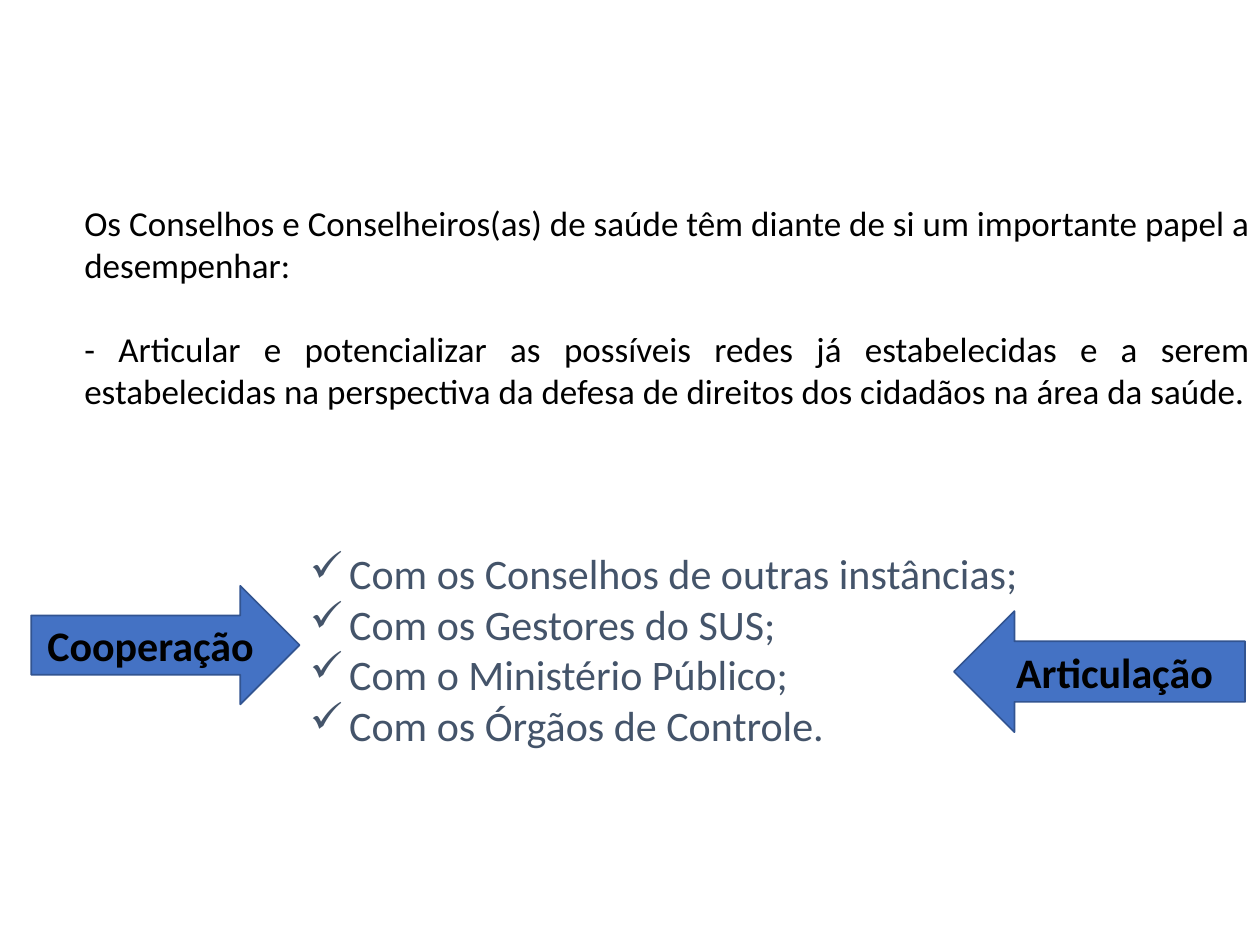
import pptx
import pptx.util
import pptx.dml.color
import pptx.enum.shapes
import pptx.enum.text
import lxml.etree
import pptx.oxml.ns

Cm = pptx.util.Cm
Pt = pptx.util.Pt
RGB = pptx.dml.color.RGBColor
Kind = pptx.enum.shapes.MSO_SHAPE
Align = pptx.enum.text.PP_ALIGN
Anchor = pptx.enum.text.MSO_ANCHOR

BLACK = RGB(0x00, 0x00, 0x00)
SLATE = RGB(0x44, 0x54, 0x6A)
BLUE = RGB(0x44, 0x72, 0xC4)
NAVY = RGB(0x32, 0x54, 0x91)


def write(par, text, size, color, bold=False):
    run = par.add_run()
    run.text = text
    run.font.name = "Calibri"
    run.font.size = Pt(size)
    run.font.color.rgb = color
    run.font.bold = bold


def add_box(left, top, width, height):
    frame = slide.shapes.add_textbox(Cm(left), Cm(top), Cm(width), Cm(height)).text_frame
    frame.word_wrap = True
    return frame


deck = pptx.Presentation()
deck.slide_width = Cm(25.4)
deck.slide_height = Cm(19.05)
slide = deck.slides.add_slide(deck.slide_layouts[6])

# Role of the councils
role = [
    "Os Conselhos e Conselheiros(as) de saúde têm diante de si um importante papel a desempenhar:",
    "- Articular e potencializar as possíveis redes já estabelecidas e a serem estabelecidas "
    "na perspectiva da defesa de direitos dos cidadãos na área da saúde.",
]
frame = add_box(1.45, 3.94, 24, 4.52)
for i, text in enumerate(role):
    par = frame.add_paragraph() if i else frame.paragraphs[0]
    par.alignment = Align.JUSTIFY
    if i:
        par.space_before = Pt(24)
    write(par, text, 20, BLACK)

# Partners, as a checked list
partners = [
    "Com os Conselhos de outras instâncias;",
    "Com os Gestores do SUS;",
    "Com o Ministério Público;",
    "Com os Órgãos de Controle.",
]
frame = add_box(6, 10.92, 15.14, 4.37)
for i, text in enumerate(partners):
    par = frame.add_paragraph() if i else frame.paragraphs[0]
    props = par._p.get_or_add_pPr()
    props.set("marL", str(Cm(0.79)))
    props.set("indent", str(-Cm(0.79)))
    mark = lxml.etree.SubElement(props, pptx.oxml.ns.qn("a:buChar"))
    mark.set("char", "✓")
    write(par, text, 24, SLATE)

# Arrows pointing at the list from both sides
arrows = [
    (Kind.LEFT_ARROW, "Articulação", 19.23, 12.32, 5.87, 2.44),
    (Kind.RIGHT_ARROW, "Cooperação", 0.63, 11.81, 5.41, 2.39),
]
for kind, text, left, top, width, height in arrows:
    arrow = slide.shapes.add_shape(kind, Cm(left), Cm(top), Cm(width), Cm(height))
    arrow.shadow.inherit = False
    arrow.fill.solid()
    arrow.fill.fore_color.rgb = BLUE
    arrow.line.color.rgb = NAVY
    arrow.line.width = Pt(1)
    arrow.text_frame.vertical_anchor = Anchor.MIDDLE
    par = arrow.text_frame.paragraphs[0]
    par.alignment = Align.CENTER
    write(par, text, 24, BLACK, bold=True)

deck.save("out.pptx")
